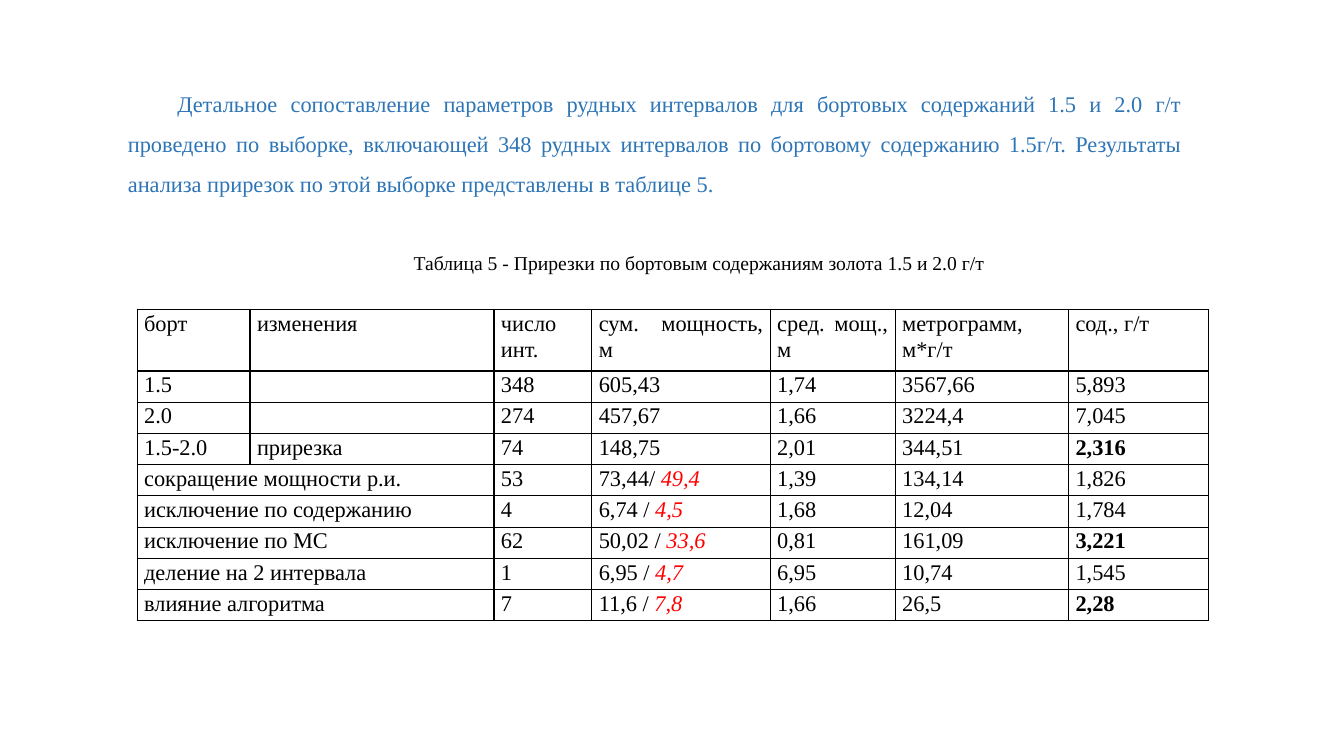
"""Build a slide comparing ore intervals at two cut-off grades."""
import dataclasses
import typing

import lxml.etree
import pptx
import pptx.dml.color
import pptx.enum.text
import pptx.oxml.ns
import pptx.util

SCALE = 9144
FONT = "Times New Roman"
COLORS = {"blue": "2E75B6", "black": "000000", "red": "FF0000"}
ALIGN = pptx.enum.text.PP_ALIGN
WIDTHS = (112, 242, 97, 177, 124, 172, 139)
HEADS = ("борт", "изменения", "число инт.", "сум. мощность, м",
         "сред. мощ., м", "метрограмм, м*г/т", "сод., г/т")


@dataclasses.dataclass
class Block:
    text: str
    box: tuple[int, int, int, int]
    size: int
    color: str
    align: typing.Any


@dataclasses.dataclass
class Row:
    cells: tuple[str, ...]
    share: str = ""
    bold: bool = False
    merged: bool = False
    height: int = 31


BLOCKS = (
    Block("Детальное сопоставление параметров рудных интервалов для бортовых "
          "содержаний 1.5 и 2.0 г/т проведено по выборке, включающей 348 рудных "
          "интервалов по бортовому содержанию 1.5г/т. Результаты анализа прирезок "
          "по этой выборке представлены в таблице 5.",
          (117, 71, 1065, 127), 16, "blue", ALIGN.JUSTIFY),
    Block("Таблица 5 - Прирезки по бортовым содержаниям золота 1.5 и 2.0 г/т",
          (216, 232, 906, 42), 14, "black", ALIGN.CENTER),
)
ROWS = (
    Row(HEADS, height=61),
    Row(("1.5", "", "348", "605,43", "1,74", "3567,66", "5,893")),
    Row(("2.0", "", "274", "457,67", "1,66", "3224,4", "7,045")),
    Row(("1.5-2.0", "прирезка", "74", "148,75", "2,01", "344,51", "2,316"), bold=True),
    Row(("сокращение мощности р.и.", "", "53", "73,44/ ", "1,39", "134,14", "1,826"),
        "49,4", merged=True),
    Row(("исключение по содержанию", "", "4", "6,74 / ", "1,68", "12,04", "1,784"),
        "4,5", merged=True),
    Row(("исключение по МС", "", "62", "50,02 / ", "0,81", "161,09", "3,221"),
        "33,6", bold=True, merged=True),
    Row(("деление на 2 интервала", "", "1", "6,95 / ", "6,95", "10,74", "1,545"),
        "4,7", merged=True),
    Row(("влияние алгоритма", "", "7", "11,6 / ", "1,66", "26,5", "2,28"),
        "7,8", bold=True, merged=True),
)


def px(num: int) -> pptx.util.Emu:
    return pptx.util.Emu(num * SCALE)


def style(run: typing.Any, size: int, color: str) -> None:
    run.font.name = FONT
    run.font.size = pptx.util.Pt(size)
    run.font.color.rgb = pptx.dml.color.RGBColor.from_string(COLORS[color])


def add(parent: typing.Any, tag: str, **attrs: str) -> typing.Any:
    return lxml.etree.SubElement(parent, pptx.oxml.ns.qn(tag), **attrs)


def draw_block(slide: typing.Any, block: Block) -> None:
    frame = slide.shapes.add_textbox(*map(px, block.box)).text_frame
    frame.word_wrap = True
    frame.auto_size = pptx.enum.text.MSO_AUTO_SIZE.SHAPE_TO_FIT_TEXT
    frame.text = block.text
    para = frame.paragraphs[0]
    para.alignment = block.align
    para.line_spacing = 1.5
    props = para._p.get_or_add_pPr()
    props.set("marL", "0")
    props.set("indent", str(px(49)))
    style(para.runs[0], block.size, block.color)


def frame_cell(cell: typing.Any) -> None:
    cell.margin_left = cell.margin_right = px(7)
    cell.margin_top = cell.margin_bottom = 0
    props = cell._tc.get_or_add_tcPr()
    for side in ("L", "R", "T", "B"):
        line = add(props, f"a:ln{side}", w=str(pptx.util.Pt(1)))
        add(add(line, "a:solidFill"), "a:srgbClr", val=COLORS["black"])
    cell.fill.background()


def fill_cell(cell: typing.Any, text: str, share: str, bold: bool) -> None:
    para = cell.text_frame.paragraphs[0]
    para.text = text
    para.alignment = ALIGN.JUSTIFY
    para.line_spacing = 1.07
    for run in para.runs:
        style(run, 16, "black")
        run.font.bold = bold
    if share:
        run = para.add_run()
        run.text = share
        style(run, 16, "red")
        run.font.italic = True
    if not text:
        add(add(para._p, "a:endParaRPr", sz="1600"), "a:latin", typeface=FONT)


def draw_table(slide: typing.Any) -> None:
    high = sum(row.height for row in ROWS)
    table = slide.shapes.add_table(len(ROWS), len(WIDTHS), px(136), px(307),
                                   px(sum(WIDTHS)), px(high)).table
    table.first_row = table.horz_banding = False
    for col, width in zip(table.columns, WIDTHS):
        col.width = px(width)
    for num, row in enumerate(ROWS):
        table.rows[num].height = px(row.height)
        for col, text in enumerate(row.cells):
            cell = table.cell(num, col)
            frame_cell(cell)
            fill_cell(cell, text, row.share if col == 3 else "",
                      row.bold and col == len(WIDTHS) - 1)
        if row.merged:
            table.cell(num, 0).merge(table.cell(num, 1))


def main() -> None:
    deck = pptx.Presentation()
    deck.slide_width, deck.slide_height = px(1333), px(750)
    slide = deck.slides.add_slide(deck.slide_layouts[6])
    for block in BLOCKS:
        draw_block(slide, block)
    draw_table(slide)
    deck.save("out.pptx")


if __name__ == "__main__":
    main()
